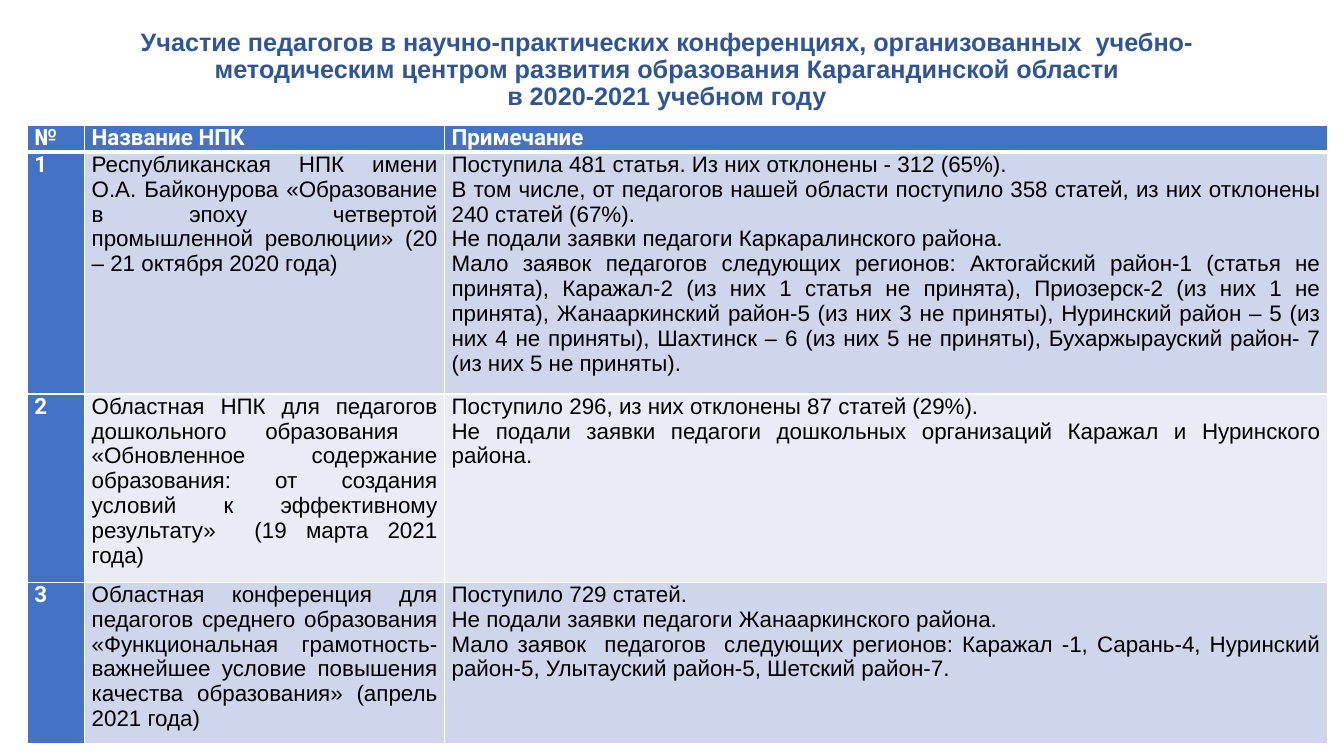
from lxml import etree
from pptx import Presentation
from pptx.dml.color import RGBColor
from pptx.enum import text
from pptx.oxml import ns
from pptx.util import Inches, Pt

COLORS = {
    "title": "2F5597",
    "accent": "4472C4",
    "odd": "CFD5EA",
    "even": "E9EBF5",
    "white": "FFFFFF",
    "black": "000000",
}

TITLE = [
    "Участие педагогов в научно-практических конференциях, организованных  учебно-методическим центром развития образования Карагандинской области",
    "в 2020-2021 учебном году",
]

HEADER = ("№", ["Название НПК"], ["Примечание"])
CONFERENCES = [
    (
        "1",
        ["Республиканская НПК имени О.А. Байконурова «Образование в эпоху четвертой промышленной революции» (20 – 21 октября 2020 года)"],
        [
            "Поступила 481 статья. Из них отклонены - 312 (65%).",
            "В том числе, от педагогов нашей области поступило 358 статей, из них отклонены 240 статей (67%).",
            "Не подали заявки педагоги Каркаралинского района.",
            "Мало заявок педагогов следующих регионов: Актогайский район-1 (статья не принята), Каражал-2 (из них 1 статья не принята), Приозерск-2 (из них 1 не принята), Жанааркинский район-5 (из них 3 не приняты), Нуринский район – 5 (из них 4 не приняты), Шахтинск – 6 (из них 5 не приняты), Бухаржырауский район- 7 (из них 5 не приняты).",
        ],
    ),
    (
        "2",
        ["Областная НПК для педагогов дошкольного образования  «Обновленное содержание образования: от создания условий к эффективному результату»  (19 марта 2021 года)"],
        [
            "Поступило 296, из них отклонены 87 статей (29%).",
            "Не подали заявки педагоги дошкольных организаций Каражал и Нуринского района.",
        ],
    ),
    (
        "3",
        ["Областная конференция для педагогов среднего образования «Функциональная грамотность-важнейшее условие повышения качества образования» (апрель 2021 года)"],
        [
            "Поступило 729 статей.",
            "Не подали заявки педагоги Жанааркинского района.",
            "Мало заявок  педагогов  следующих регионов: Каражал -1, Сарань-4, Нуринский район-5, Улытауский район-5, Шетский район-7.",
        ],
    ),
]

COLUMN_WIDTHS = [0.57, 3.57, 8.76]
ROW_HEIGHTS = [0.27, 2.39, 1.6, 1.59]


def add_span(para, words, size, font, color, bold):
    span = para.add_run()
    span.text = words
    span.font.size = Pt(size)
    span.font.name = font
    span.font.bold = bold
    span.font.color.rgb = RGBColor.from_string(COLORS[color])


def add_borders(cell, bottom_width):
    properties = cell._tc.get_or_add_tcPr()
    for side, width in (("L", 1), ("R", 1), ("T", 1), ("B", bottom_width)):
        line = etree.SubElement(properties, ns.qn(f"a:ln{side}"), w=str(Pt(width)))
        fill = etree.SubElement(line, ns.qn("a:solidFill"))
        etree.SubElement(fill, ns.qn("a:srgbClr"), val=COLORS["white"])


def fill_cell(cell, paragraphs, row, column):
    strong = row == 0 or column == 0
    cell.margin_left = cell.margin_right = Inches(0.07)
    cell.margin_top = cell.margin_bottom = 0
    add_borders(cell, 3 if row == 0 else 1)
    cell.fill.solid()
    shade = "accent" if strong else "odd" if row % 2 else "even"
    cell.fill.fore_color.rgb = RGBColor.from_string(COLORS[shade])
    for index, words in enumerate(paragraphs):
        para = cell.text_frame.add_paragraph() if index else cell.text_frame.paragraphs[0]
        para.alignment = text.PP_ALIGN.JUSTIFY
        if strong:
            add_span(para, words, 16, "Roboto", "white", True)
        else:
            add_span(para, words, 16, "Arial", "black", False)


def add_title(page):
    box = page.shapes.add_textbox(Inches(0.42), Inches(0.24), Inches(12.39), Inches(0.91))
    frame = box.text_frame
    frame.word_wrap = True
    frame.vertical_anchor = text.MSO_ANCHOR.MIDDLE
    para = frame.paragraphs[0]
    para.alignment = text.PP_ALIGN.CENTER
    para.line_spacing = 0.9
    for index, words in enumerate(TITLE):
        if index:
            para.add_line_break()
        add_span(para, words, 18, "Arial", "title", True)


def add_conference_table(page):
    rows = [HEADER] + CONFERENCES
    table = page.shapes.add_table(
        len(rows), len(COLUMN_WIDTHS), Inches(0.27), Inches(1.24),
        Inches(sum(COLUMN_WIDTHS)), Inches(sum(ROW_HEIGHTS)),
    ).table
    for column, width in zip(table.columns, COLUMN_WIDTHS):
        column.width = Inches(width)
    for row, height in zip(table.rows, ROW_HEIGHTS):
        row.height = Inches(height)
    for row, (number, name, notes) in enumerate(rows):
        for column, paragraphs in enumerate(([number], name, notes)):
            fill_cell(table.cell(row, column), paragraphs, row, column)


def main():
    deck = Presentation()
    deck.slide_width = Inches(13.33)
    deck.slide_height = Inches(7.5)
    page = deck.slides.add_slide(deck.slide_layouts[6])
    add_title(page)
    add_conference_table(page)
    deck.save("out.pptx")


if __name__ == "__main__":
    main()
